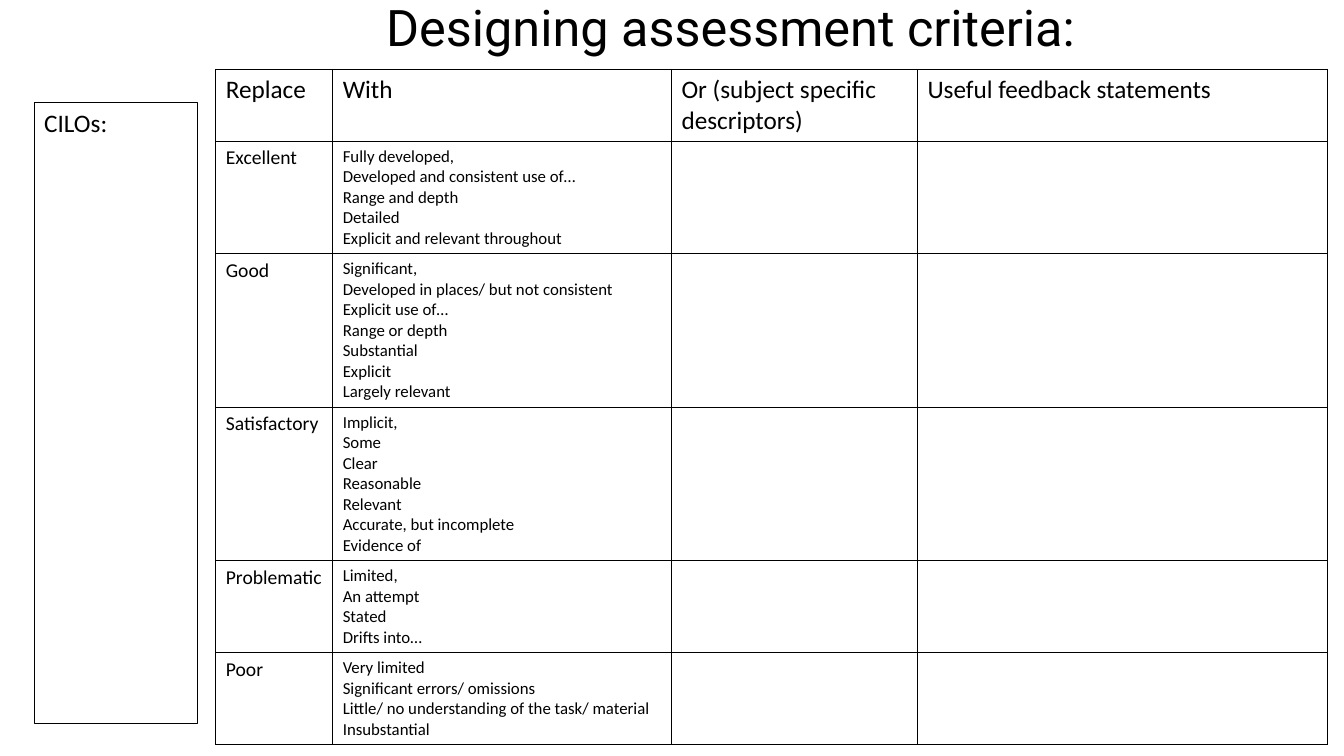
import pptx
import pptx.util
import pptx.dml.color
import pptx.enum.shapes
import pptx.enum.text
import pptx.oxml
import pptx.oxml.ns

Inches, Pt = pptx.util.Inches, pptx.util.Pt
ALIGN = pptx.enum.text.PP_ALIGN
ANCHOR = pptx.enum.text.MSO_ANCHOR
COLORS = {"ink": "000000"}

HEADS = ["Replace", "With", "Or (subject specific descriptors)",
         "Useful feedback statements"]
GRADES = {
    "Excellent": ["Fully developed,", "Developed and consistent use of…",
                  "Range and depth", "Detailed",
                  "Explicit and relevant throughout"],
    "Good": ["Significant,", "Developed in places/ but not consistent",
             "Explicit use of…", "Range or depth", "Substantial",
             "Explicit", "Largely relevant"],
    "Satisfactory": ["Implicit,", "Some", "Clear", "Reasonable", "Relevant",
                     "Accurate, but incomplete", "Evidence of"],
    "Problematic": ["Limited,", "An attempt", "Stated", "Drifts into…"],
    "Poor": ["Very limited", "Significant errors/ omissions",
             "Little/ no understanding of the task/ material",
             "Insubstantial"],
}
WIDTHS = [1.16, 3.36, 2.44, 4.07]
ROW = 0.41


def ink():
    return pptx.dml.color.RGBColor.from_string(COLORS["ink"])


def write(frame, lines, size, face="Calibri"):
    """Fill a text frame with one left-aligned paragraph per line."""
    for i, line in enumerate(lines):
        para = frame.paragraphs[0] if i == 0 else frame.add_paragraph()
        para.alignment = ALIGN.LEFT
        run = para.add_run()
        run.text = line
        run.font.name = face
        run.font.size = Pt(size)
        run.font.bold = False
        run.font.color.rgb = ink()


def place(shape, box):
    shape.left, shape.top, shape.width, shape.height = map(Inches, box)


def border(cell):
    """Draw a 1 pt line on each side of the cell and clear its fill."""
    props = cell._tc.get_or_add_tcPr()
    for side in "LRTB":
        props.append(pptx.oxml.parse_xml(
            f'<a:ln{side} {pptx.oxml.ns.nsdecls("a")} w="{Pt(1)}">'
            f'<a:solidFill><a:srgbClr val="{COLORS["ink"]}"/></a:solidFill>'
            f'</a:ln{side}>'))
    cell.fill.background()


def add_title(slide, box):
    title = slide.shapes.title
    place(title, box)
    frame = title.text_frame
    frame.auto_size = pptx.enum.text.MSO_AUTO_SIZE.NONE
    frame.vertical_anchor = ANCHOR.MIDDLE
    write(frame, ["Designing assessment criteria:"], 36, "Roboto")
    frame.paragraphs[0].line_spacing = 0.9


def add_rubric(slide, box):
    rows = [[[head] for head in HEADS]]
    rows += [[[grade], terms, [], []] for grade, terms in GRADES.items()]
    holder = slide.shapes.add_table(len(rows), len(HEADS), *map(Inches, box))
    table = holder.table
    table.first_row = table.horz_banding = False
    for col, width in zip(table.columns, WIDTHS):
        col.width = Inches(width)
    for r, row in enumerate(rows):
        table.rows[r].height = Inches(ROW)
        sizes = [14, 12, 12, 12] if r else [18] * len(HEADS)
        for c, lines in enumerate(row):
            cell = table.cell(r, c)
            border(cell)
            write(cell.text_frame, lines, sizes[c])
    place(holder, box)


def add_cilos(slide, box):
    kind = pptx.enum.shapes.MSO_SHAPE.RECTANGLE
    panel = slide.shapes.add_shape(kind, *map(Inches, box))
    panel.shadow.inherit = False
    panel.fill.background()
    panel.line.color.rgb = ink()
    panel.line.width = Pt(0.75)
    frame = panel.text_frame
    frame.word_wrap = True
    frame.vertical_anchor = ANCHOR.TOP
    write(frame, ["CILOs:"], 18)


def main():
    deck = pptx.Presentation()
    deck.slide_width, deck.slide_height = Inches(13.33), Inches(7.5)
    slide = deck.slides.add_slide(deck.slide_layouts.get_by_name("Title Only"))
    add_title(slide, (3.73, -0.43, 11.5, 1.45))
    add_rubric(slide, (2.14, 0.69, sum(WIDTHS), 6.6))
    add_cilos(slide, (0.34, 1.02, 1.62, 6.16))
    deck.save("out.pptx")


if __name__ == "__main__":
    main()
